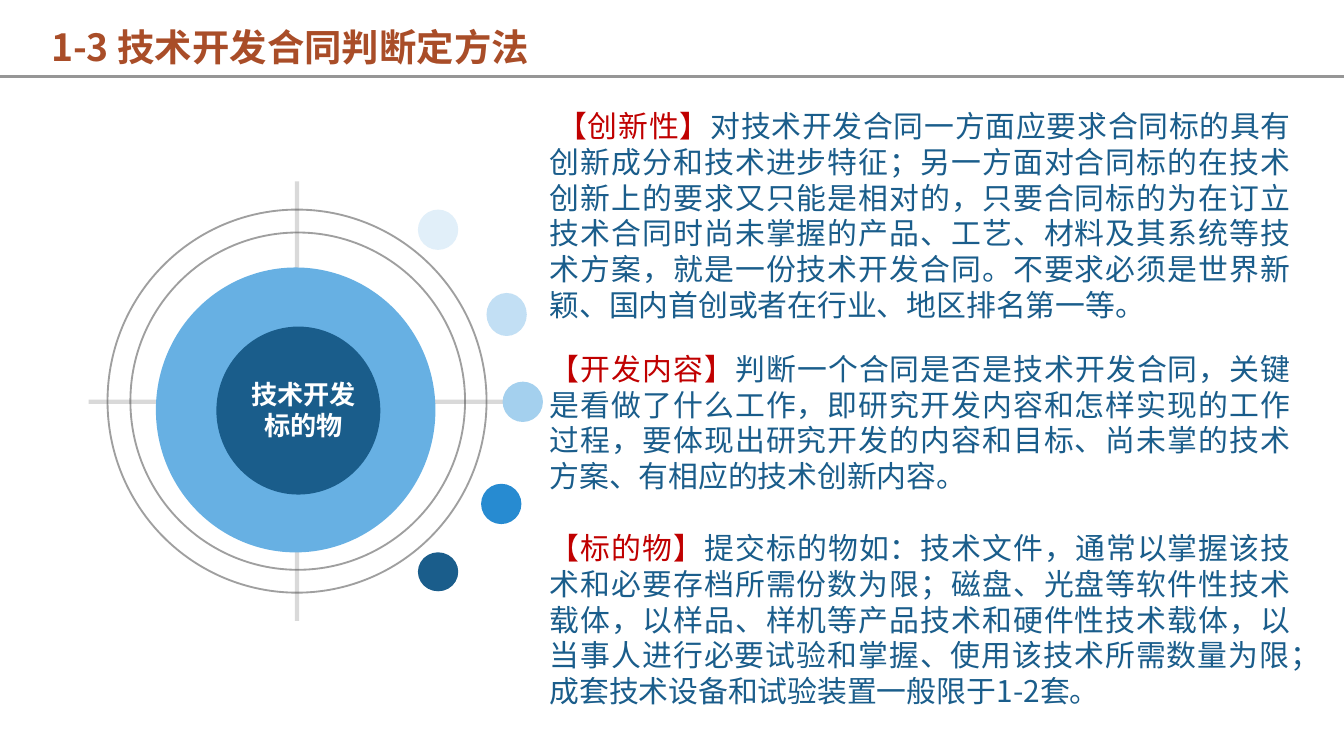
from pptx import Presentation
from pptx.dml.color import RGBColor
from pptx.enum.shapes import MSO_CONNECTOR, MSO_SHAPE
from pptx.enum.text import MSO_ANCHOR, MSO_AUTO_SIZE, PP_ALIGN
from pptx.oxml.ns import qn
from pptx.util import Inches, Pt
from lxml.etree import SubElement

FONT = "Noto Sans CJK SC"
COLORS = {
    "title": "A94D28", "label": "C00000", "navy": "1A5D8B", "sky": "67B0E3",
    "axis": "B5B5B5", "ring": "404040", "rule": "969696", "white": "FFFFFF",
    "dot1": "E1EFF9", "dot2": "C2DFF4", "dot3": "A4D0EE", "dot4": "278BD1",
}
RINGS = [(0.97, 1.73, 2.49, 2.51), (0.8, 1.56, 2.82, 2.85)]
DISCS = [
    ("sky", (1.16, 1.99, 2.08, 2.12)),
    ("navy", (1.61, 2.43, 1.22, 1.25)),
    ("dot1", (3.11, 1.56, 0.3, 0.3)),
    ("dot2", (3.62, 2.18, 0.3, 0.32)),
    ("dot3", (3.74, 2.84, 0.3, 0.3)),
    ("dot4", (3.58, 3.6, 0.3, 0.3)),
    ("navy", (3.11, 4.11, 0.3, 0.29)),
]
# Space before in points, label, explanation
CRITERIA = [
    (0, "【创新性】",
     "对技术开发合同一方面应要求合同标的具有创新成分和技术进步特征；另一方面对合同标的在技术"
     "创新上的要求又只能是相对的，只要合同标的为在订立技术合同时尚未掌握的产品、工艺、材料及其"
     "系统等技术方案，就是一份技术开发合同。不要求必须是世界新颖、国内首创或者在行业、地区排名"
     "第一等。"),
    (15, "【开发内容】",
     "判断一个合同是否是技术开发合同，关键是看做了什么工作，即研究开发内容和怎样实现的工作过程，"
     "要体现出研究开发的内容和目标、尚未掌的技术方案、有相应的技术创新内容。"),
    (19.2, "【标的物】",
     "提交标的物如：技术文件，通常以掌握该技术和必要存档所需份数为限；磁盘、光盘等软件性技术载体，"
     "以样品、样机等产品技术和硬件性技术载体，以当事人进行必要试验和掌握、使用该技术所需数量为限；"
     "成套技术设备和试验装置一般限于1-2套。"),
]


def rgb(name):
    return RGBColor.from_string(COLORS[name])


def place(sp, box):
    for key, value in zip(("left", "top", "width", "height"), box):
        setattr(sp, key, Inches(value))


def set_line(line, color, width, alpha=None):
    line.width = Pt(width)
    line.color.rgb = rgb(color)
    if alpha:
        clr = line.fill._xPr.find(".//" + qn("a:srgbClr"))
        SubElement(clr, qn("a:alpha")).set("val", str(alpha * 1000))


def add_line(s, start, end, color, width, alpha=None):
    cx = s.shapes.add_connector(
        MSO_CONNECTOR.STRAIGHT, *map(Inches, (*start, *end)))
    set_line(cx.line, color, width, alpha)
    SubElement(cx._element.spPr, qn("a:effectLst"))


def add_ellipse(s, box):
    sp = s.shapes.add_shape(MSO_SHAPE.OVAL, *map(Inches, box))
    sp.shadow.inherit = False
    return sp


def add_ring(s, box):
    sp = add_ellipse(s, box)
    sp.fill.background()
    set_line(sp.line, "ring", 1, 50)


def add_disc(s, color, box):
    sp = add_ellipse(s, box)
    sp.fill.solid()
    sp.fill.fore_color.rgb = rgb(color)
    sp.line.fill.background()


def set_frame(tf, margin_x, margin_y):
    frame = {
        "word_wrap": True, "auto_size": MSO_AUTO_SIZE.NONE,
        "vertical_anchor": MSO_ANCHOR.TOP,
        "margin_left": Inches(margin_x), "margin_right": Inches(margin_x),
        "margin_top": Inches(margin_y), "margin_bottom": Inches(margin_y),
    }
    for key, value in frame.items():
        setattr(tf, key, value)


def set_paragraph(p, align, spacing, before=0):
    values = {"alignment": align, "line_spacing": Pt(spacing),
              "space_before": Pt(before), "space_after": Pt(0)}
    for key, value in values.items():
        setattr(p, key, value)


def add_run(p, text, size, color, bold=False):
    r = p.add_run()
    r.text = text
    for key, value in {"name": FONT, "size": Pt(size), "bold": bold}.items():
        setattr(r.font, key, value)
    r.font.color.rgb = rgb(color)
    SubElement(r._r.get_or_add_rPr(), qn("a:ea")).set("typeface", FONT)


def fill_title(sp):
    place(sp, (0.28, 0.06, 6.29, 0.5))
    set_frame(sp.text_frame, 0.1, 0.05)
    p = sp.text_frame.paragraphs[0]
    set_paragraph(p, PP_ALIGN.LEFT, 29)
    add_run(p, "1-3 技术开发合同判断定方法", 20, "title", True)


def fill_criteria(sp):
    place(sp, (4.02, 0.76, 5.66, 4.86))
    tf = sp.text_frame
    set_frame(tf, 0.07, 0.04)
    for i, (before, label, text) in enumerate(CRITERIA):
        p = tf.add_paragraph() if i else tf.paragraphs[0]
        set_paragraph(p, PP_ALIGN.JUSTIFY, 19.2, before)
        pPr = p._p.get_or_add_pPr()
        pPr.set("marL", "0")
        pPr.set("indent", "0")
        SubElement(pPr, qn("a:buNone"))
        if i == 0:
            add_run(p, " ", 14, "label")
        add_run(p, label, 16, "label")
        add_run(p, text, 16, "navy")


def add_center_text(s):
    sp = s.shapes.add_textbox(*map(Inches, (1.77, 2.78, 0.98, 0.54)))
    set_frame(sp.text_frame, 0.07, 0.04)
    p = sp.text_frame.paragraphs[0]
    set_paragraph(p, PP_ALIGN.CENTER, 16.6)
    add_run(p, "技术开发标的物", 14, "white", True)


def main():
    prs = Presentation()
    prs.slide_width = Inches(10)
    prs.slide_height = prs.slide_width * 9 // 16
    s = prs.slides.add_slide(prs.slide_layouts[1])
    fill_title(s.shapes.title)
    fill_criteria(s.placeholders[1])
    add_line(s, (0.66, 2.99), (3.77, 2.99), "axis", 2.25, 50)
    add_line(s, (2.21, 1.35), (2.21, 4.62), "axis", 2.25, 50)
    for box in RINGS:
        add_ring(s, box)
    for color, box in DISCS:
        add_disc(s, color, box)
    add_center_text(s)
    add_line(s, (0, 0.57), (10, 0.57), "rule", 1.5)
    prs.save("out.pptx")


if __name__ == "__main__":
    main()
